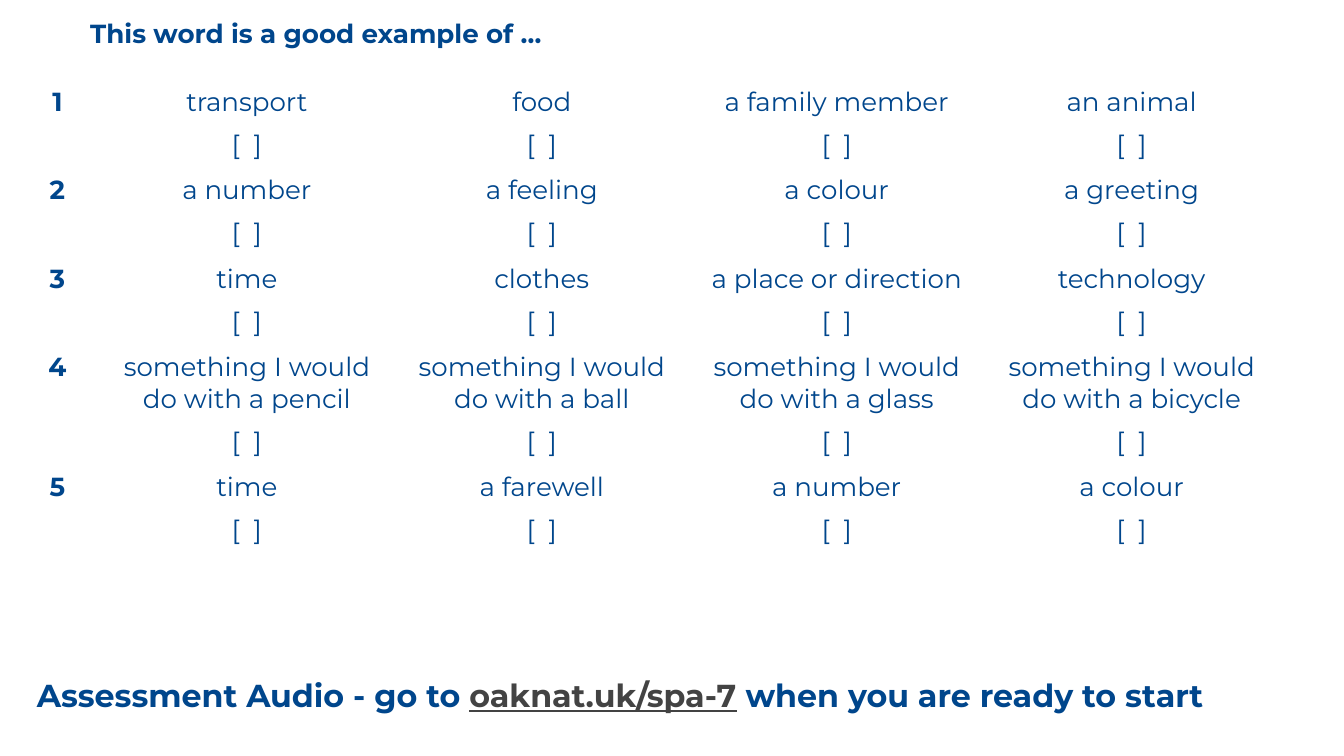
from pptx import Presentation
from pptx.dml.color import RGBColor
from pptx.enum.text import MSO_ANCHOR, MSO_AUTO_SIZE, PP_ALIGN
from pptx.util import Pt

NAVY = RGBColor(0x00, 0x46, 0x8C)
GREY = RGBColor(0x43, 0x43, 0x43)
FONT = "Montserrat"
CHECKBOX = "[  ]"
QUESTIONS = [
    ["transport", "food", "a family member", "an animal"],
    ["a number", "a feeling", "a colour", "a greeting"],
    ["time", "clothes", "a place or direction", "technology"],
    [f"something I would do with a {item}"
     for item in ("pencil", "ball", "glass", "bicycle")],
    ["time", "a farewell", "a number", "a colour"],
]
ROW_HEIGHTS = [91.5, 91.5, 91.5, 106.5, 133]
NUMBER_WIDTH = 90


def style(run, size, color=NAVY, bold=True):
    run.font.name = FONT
    run.font.size = Pt(size)
    run.font.bold = bold
    run.font.color.rgb = color


def place(shape, left, top, width, height):
    shape.left, shape.top = Pt(left), Pt(top)
    shape.width, shape.height = Pt(width), Pt(height)


def set_frame(frame):
    frame.word_wrap = True
    frame.auto_size = MSO_AUTO_SIZE.NONE
    frame.vertical_anchor = MSO_ANCHOR.TOP
    frame.margin_left = frame.margin_right = Pt(7.2)
    frame.margin_top = frame.margin_bottom = Pt(7.2)


def add_heading(slide, left, top, width, height):
    heading = slide.shapes.title
    place(heading, left, top, width, height)
    heading.text_frame.text = "This word is a good example of …"
    set_frame(heading.text_frame)
    paragraph = heading.text_frame.paragraphs[0]
    paragraph.alignment = PP_ALIGN.LEFT
    paragraph.space_before = Pt(0)
    style(paragraph.runs[0], 28)


def fill_cell(cell, lines, bold):
    cell.fill.background()
    cell.margin_left = cell.margin_right = Pt(5)
    cell.margin_top = cell.margin_bottom = Pt(7.2)
    cell.text_frame.text = "\n".join(lines)
    for index, paragraph in enumerate(cell.text_frame.paragraphs):
        paragraph.alignment = PP_ALIGN.CENTER
        paragraph.space_before = Pt(12 if index else 0)
        style(paragraph.runs[0], 28, bold=bold)


def add_questions(slide, left, top, width):
    option_count = len(QUESTIONS[0])
    grid = slide.shapes.add_table(
        len(QUESTIONS), option_count + 1,
        Pt(left), Pt(top), Pt(width), Pt(sum(ROW_HEIGHTS))).table
    grid.first_row = grid.horz_banding = False
    grid.columns[0].width = Pt(NUMBER_WIDTH)
    for column in range(1, option_count + 1):
        grid.columns[column].width = Pt((width - NUMBER_WIDTH) / option_count)
    for row, (options, height) in enumerate(zip(QUESTIONS, ROW_HEIGHTS)):
        grid.rows[row].height = Pt(height)
        fill_cell(grid.cell(row, 0), [str(row + 1)], True)
        for column, option in enumerate(options, 1):
            fill_cell(grid.cell(row, column), [option, CHECKBOX], False)


def add_audio_note(slide, left, top, width, height):
    note = slide.shapes.add_textbox(Pt(left), Pt(top), Pt(width), Pt(height))
    set_frame(note.text_frame)
    paragraph = note.text_frame.paragraphs[0]
    for words, color, underlined in (
            ("Assessment Audio - go to ", NAVY, False),
            ("oaknat.uk/spa-7", GREY, True),
            (" when you are ready to start", NAVY, False)):
        run = paragraph.add_run()
        run.text = words
        style(run, 34, color)
        run.font.underline = underlined


def main():
    deck = Presentation()
    deck.slide_width, deck.slide_height = Pt(1440), Pt(810)
    slide = deck.slides.add_slide(deck.slide_layouts.get_by_name("Title Only"))
    add_heading(slide, 89.5, 11, 638, 58)
    add_questions(slide, 16.5, 85, 1354)
    add_audio_note(slide, 32.5, 717, 1303, 58)
    deck.save("out.pptx")


if __name__ == "__main__":
    main()
